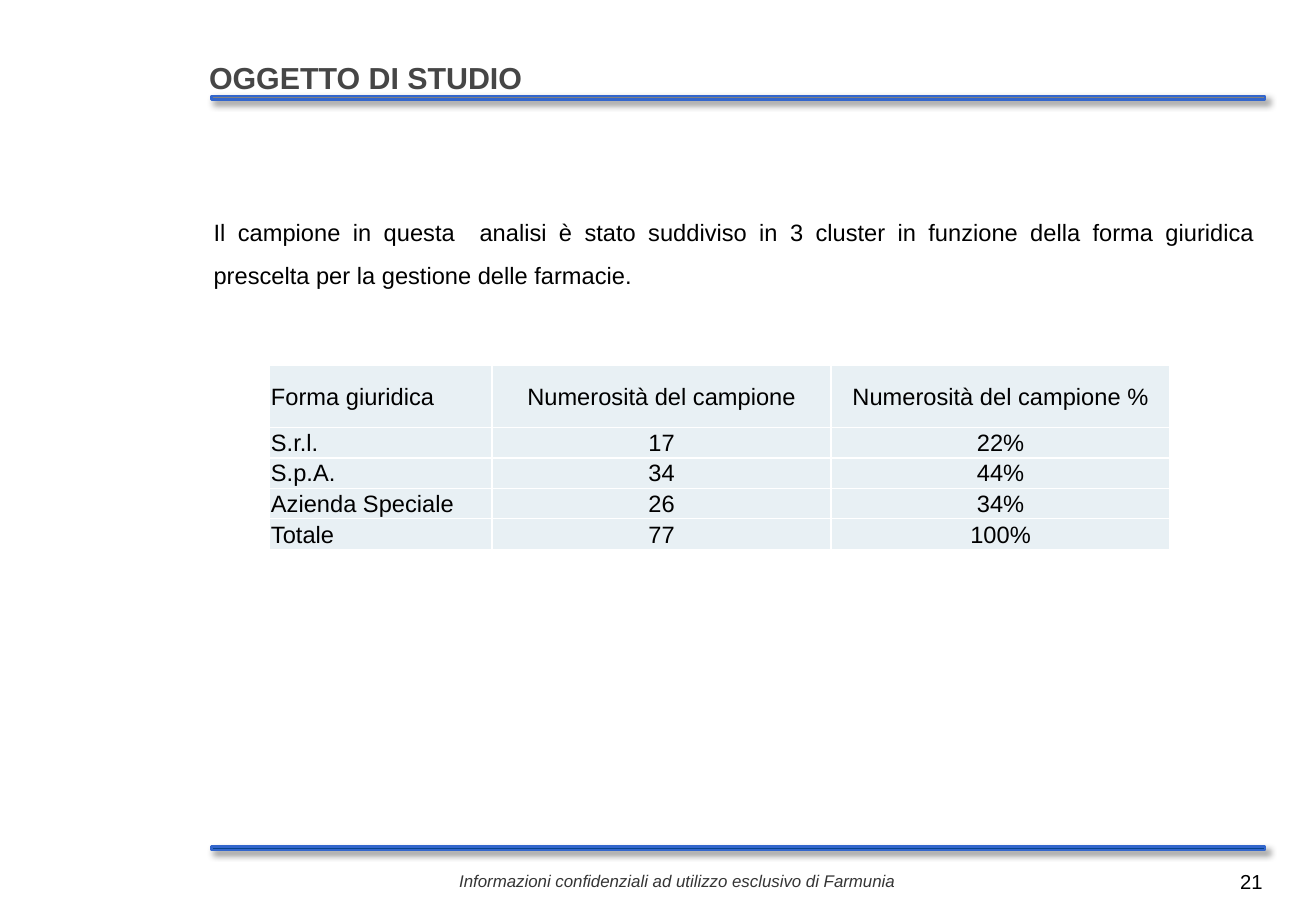
from lxml.etree import SubElement
from pptx import Presentation
from pptx.dml.color import RGBColor
from pptx.enum.shapes import MSO_SHAPE
from pptx.enum.text import MSO_ANCHOR, PP_ALIGN
from pptx.oxml.ns import qn
from pptx.util import Emu, Pt

TITLE = "OGGETTO DI STUDIO"
INTRO = ("Il campione in questa  analisi è stato suddiviso in 3 cluster in funzione "
         "della forma giuridica prescelta per la gestione delle farmacie.")
FOOTER = "Informazioni confidenziali ad utilizzo esclusivo di Farmunia"
PAGE_NUMBER = "21"
ROWS = [
    ("Forma giuridica", "Numerosità del campione", "Numerosità del campione %"),
    ("S.r.l.", "17", "22%"),
    ("S.p.A.", "34", "44%"),
    ("Azienda Speciale", "26", "34%"),
    ("Totale", "77", "100%"),
]
COLUMN_WIDTHS = (183, 279, 279)
ROW_HEIGHTS = (51, 25, 25, 25, 26)
RULES = [(79, "808080"), (697, "05438D")]  # top, fill
FONT = "Arial"
BLACK = "000000"


def px(length):
    """Convert px, at 100 to the inch, to EMU."""
    return Emu(length * 9144)


def color(hex_string):
    return RGBColor.from_string(hex_string)


def write(text_frame, text, size, font_color=BLACK, align=PP_ALIGN.LEFT, bold=False, italic=False):
    paragraph = text_frame.paragraphs[0]
    paragraph.alignment = align
    run = paragraph.add_run()
    run.text = text
    font = run.font
    font.name, font.size, font.bold, font.italic = FONT, Pt(size), bold, italic
    font.color.rgb = color(font_color)
    return paragraph


def add_text(slide, box, text, size, wrap=True, **style):
    text_box = slide.shapes.add_textbox(*map(px, box))
    text_box.text_frame.word_wrap = wrap
    return write(text_box.text_frame, text, size, **style)


def add_rule(slide, top, fill):
    rule = slide.shapes.add_shape(MSO_SHAPE.RECTANGLE, px(174), px(top), px(867), px(3))
    rule.fill.solid()
    rule.fill.fore_color.rgb = color(fill)
    rule.line.color.rgb = color("3366CC")
    rule.line.width = Pt(1.5)
    rule.shadow.inherit = False
    effects = rule._element.spPr.find(qn("a:effectLst"))
    shadow = SubElement(effects, qn("a:outerShdw"), blurRad=str(Pt(4)), dist=str(Pt(3)),
                        dir=str(45 * 60000), algn="tl", rotWithShape="0")
    shadow_color = SubElement(shadow, qn("a:srgbClr"), val=BLACK)
    SubElement(shadow_color, qn("a:alpha"), val="40000")


def add_sample_table(slide):
    frame = slide.shapes.add_table(len(ROWS), len(COLUMN_WIDTHS), px(222), px(301),
                                   px(sum(COLUMN_WIDTHS)), px(sum(ROW_HEIGHTS)))
    table = frame.table
    table.first_row = table.horz_banding = False
    for column, width in zip(table.columns, COLUMN_WIDTHS):
        column.width = px(width)
    for row, height, texts in zip(table.rows, ROW_HEIGHTS, ROWS):
        row.height = px(height)
        for index, (cell, text) in enumerate(zip(row.cells, texts)):
            cell.fill.solid()
            cell.fill.fore_color.rgb = color("E8F0F4")
            cell.vertical_anchor = MSO_ANCHOR.MIDDLE
            cell.margin_left = cell.margin_right = cell.margin_top = px(1)
            cell.margin_bottom = 0
            align = PP_ALIGN.CENTER if index else PP_ALIGN.JUSTIFY
            write(cell.text_frame, text, 14, align=align)


def main():
    presentation = Presentation()
    presentation.slide_width, presentation.slide_height = px(1083), px(750)
    slide = presentation.slides.add_slide(presentation.slide_layouts[5])

    for top, fill in RULES:
        add_rule(slide, top, fill)

    title = slide.shapes.title
    title.left, title.top, title.width, title.height = map(px, (162, 44, 753, 72))
    title.text_frame.vertical_anchor = MSO_ANCHOR.TOP
    write(title.text_frame, TITLE, 18, font_color="464646", bold=True)

    intro = add_text(slide, (166, 163, 877, 76), INTRO, 14, align=PP_ALIGN.JUSTIFY)
    intro.line_spacing = 1.5
    add_sample_table(slide)
    add_text(slide, (368, 712, 382, 27), FOOTER, 10, wrap=False, font_color="353535", italic=True)
    add_text(slide, (816, 711, 233, 40), PAGE_NUMBER, 12, align=PP_ALIGN.RIGHT)

    presentation.save("out.pptx")


if __name__ == "__main__":
    main()
